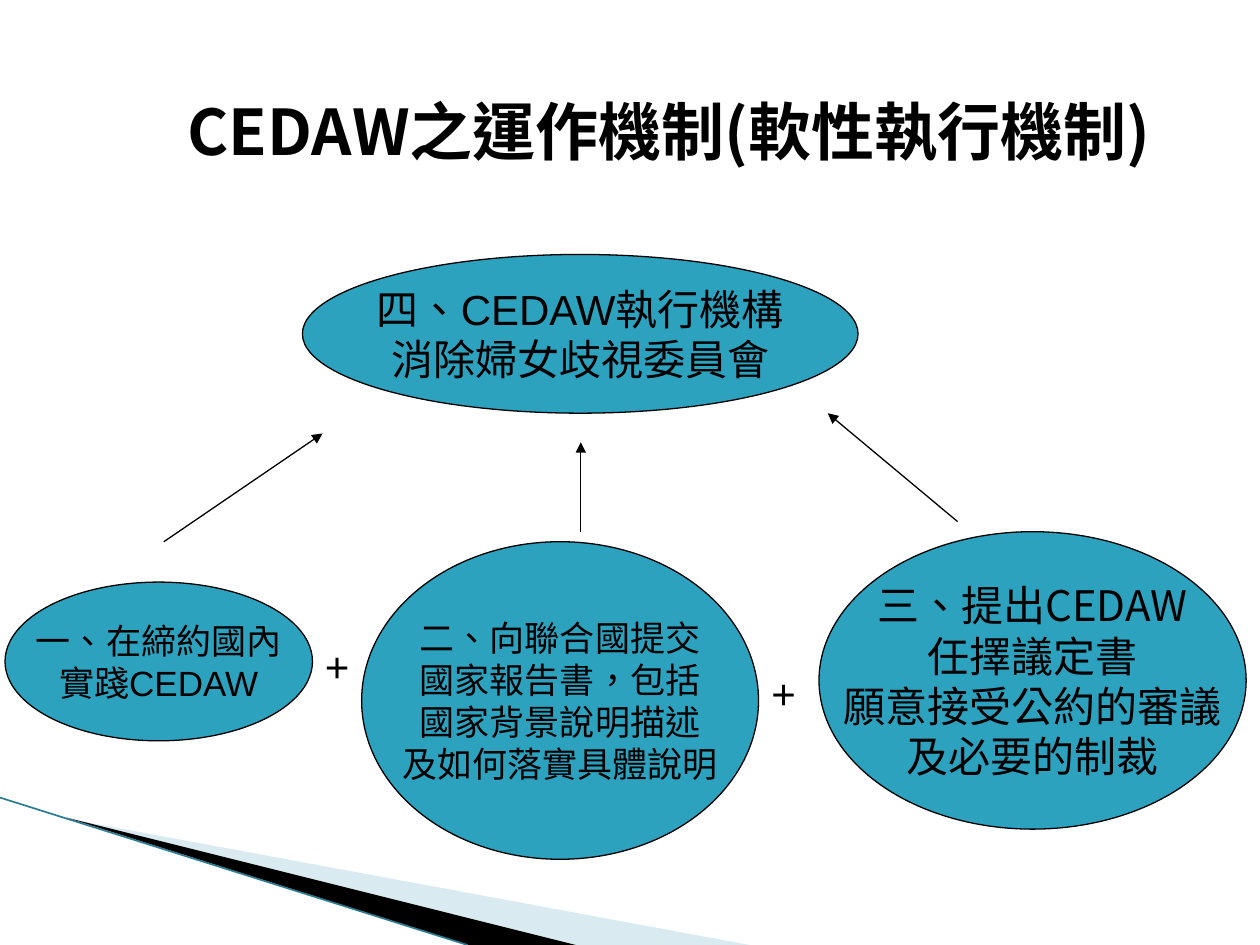
from dataclasses import dataclass
from typing import NamedTuple

from lxml.etree import SubElement
from pptx import Presentation
from pptx.dml.color import RGBColor
from pptx.enum.shapes import MSO_CONNECTOR as Conn, MSO_SHAPE as Shape
from pptx.enum.text import MSO_ANCHOR as Anchor, MSO_AUTO_SIZE as AutoSize, PP_ALIGN as Align
from pptx.oxml.ns import qn
from pptx.util import Inches, Pt


@dataclass(frozen=True)
class Theme:
    ink: str = "000000"
    oval: str = "2DA2BF"
    wedge: str = "A0CBDC"
    edge: str = "2B7C90"
    latin: str = "Arial"
    cjk: str = "Noto Sans CJK SC"
    title: int = 36
    large: int = 24
    small: int = 20
    line: float = 0.75


class Box(NamedTuple):
    """Left, top, width and height in percent of the slide."""
    x: float
    y: float
    w: float
    h: float


class Oval(NamedTuple):
    box: Box
    lines: list[str]
    size: int
    font: str


class Arrow(NamedTuple):
    start: tuple[float, float]
    end: tuple[float, float]


T = Theme()
prs = Presentation()
prs.slide_width, prs.slide_height = Inches(10), Inches(7.5)

OVALS = [
    Oval(Box(24, 26.93, 44.1, 16.8), ["四、CEDAW執行機構", "消除婦女歧視委員會"], T.large, T.latin),
    Oval(Box(0.4, 61.6, 24.4, 16.8), ["一、在締約國內", "實踐CEDAW"], T.small, T.latin),
    Oval(Box(28.7, 57.33, 31.5, 33.6),
         ["二、向聯合國提交", "國家報告書，包括", "國家背景說明描述", "及如何落實具體說明"], T.small, T.latin),
    Oval(Box(65, 56.27, 33.9, 31.47),
         ["三、提出CEDAW", "任擇議定書", "願意接受公約的審議", "及必要的制裁"], T.large, T.cjk),
]
ARROWS = [
    Arrow((13, 57.33), (25.6, 45.87)),
    Arrow((46.1, 56.27), (46.1, 46.8)),
    Arrow((76, 55.2), (65.7, 43.73)),
]
PLUSES = [Box(24.8, 67.87, 3.9, 5.2), Box(60.2, 70, 4, 6.67)]


def at(x: float, y: float) -> tuple[int, int]:
    return round(prs.slide_width * x / 100), round(prs.slide_height * y / 100)


def frame(box: Box) -> tuple[int, ...]:
    return *at(box.x, box.y), *at(box.w, box.h)


def write(tf, lines: list[str], *, size: int, font: str = T.latin, bold: bool = False,
          wrap: bool = False, anchor=Anchor.MIDDLE, align=Align.CENTER) -> None:
    tf.word_wrap, tf.vertical_anchor, tf.auto_size = wrap, anchor, AutoSize.NONE
    for i, line in enumerate(lines):
        p = tf.add_paragraph() if i else tf.paragraphs[0]
        p.alignment = align
        r = p.add_run()
        r.text = line
        r.font.size, r.font.name, r.font.bold = Pt(size), font, bold
        r.font.color.rgb = RGBColor.from_string(T.ink)
        rpr = r.font._element
        rpr.set("lang", "zh-TW")
        ea = SubElement(rpr, qn("a:ea"))
        ea.set("typeface", T.cjk)


def add_wedge(s, points: list[tuple[float, float]], color: str, alpha: int = 100) -> None:
    builder = s.shapes.build_freeform(*at(*points[0]))
    builder.add_line_segments([at(*pt) for pt in points[1:]], close=True)
    sp = builder.convert_to_shape()
    sp.shadow.inherit = False
    sp.fill.solid()
    sp.fill.fore_color.rgb = RGBColor.from_string(color)
    sp.line.fill.background()
    if alpha < 100:
        clr = sp.fill._xPr.find(qn("a:solidFill"))[0]
        SubElement(clr, qn("a:alpha")).set("val", str(alpha * 1000))


def add_line(s, line: Arrow, color: str, width: float, head: bool = True) -> None:
    cxn = s.shapes.add_connector(Conn.STRAIGHT, *at(*line.start), *at(*line.end))
    cxn.line.color.rgb = RGBColor.from_string(color)
    cxn.line.width = Pt(width)
    if head:
        SubElement(cxn.line._get_or_add_ln(), qn("a:tailEnd")).set("type", "triangle")
    SubElement(cxn._element.spPr, qn("a:effectLst"))


def add_oval(s, oval: Oval) -> None:
    sp = s.shapes.add_shape(Shape.OVAL, *frame(oval.box))
    sp.shadow.inherit = False
    sp.fill.solid()
    sp.fill.fore_color.rgb = RGBColor.from_string(T.oval)
    sp.line.color.rgb = RGBColor.from_string(T.ink)
    sp.line.width = Pt(T.line)
    write(sp.text_frame, oval.lines, size=oval.size, font=oval.font)


def main() -> None:
    s = prs.slides.add_slide(prs.slide_layouts[5])

    # Corner decoration
    add_wedge(s, [(5.5, 86.67), (59.5, 100), (45.6, 100)], T.wedge, alpha=40)
    add_wedge(s, [(5.3, 86.53), (45.7, 100), (37.2, 100)], T.ink)
    add_line(s, Arrow((0, 84.4), (37.1, 100)), T.edge, 0.95, head=False)

    # Title
    title = s.shapes.title
    title.left, title.top, title.width, title.height = frame(Box(7.5, 9.07, 90, 80.67))
    write(title.text_frame, ["CEDAW之運作機制(軟性執行機制)"], size=T.title, font=T.cjk,
          bold=True, wrap=True, anchor=Anchor.TOP)
    ppr = title.text_frame.paragraphs[0]._p.get_or_add_pPr()
    ppr.set("marL", str(Inches(0.4)))
    ppr.set("indent", str(Inches(-0.28)))

    # Mechanisms and the arrows to the committee
    for oval in OVALS:
        add_oval(s, oval)
    for arrow in ARROWS:
        add_line(s, arrow, T.ink, T.line)

    # Plus signs between the mechanisms
    for box in PLUSES:
        write(s.shapes.add_textbox(*frame(box)).text_frame, ["+"], size=T.large)

    prs.save("out.pptx")


if __name__ == "__main__":
    main()
